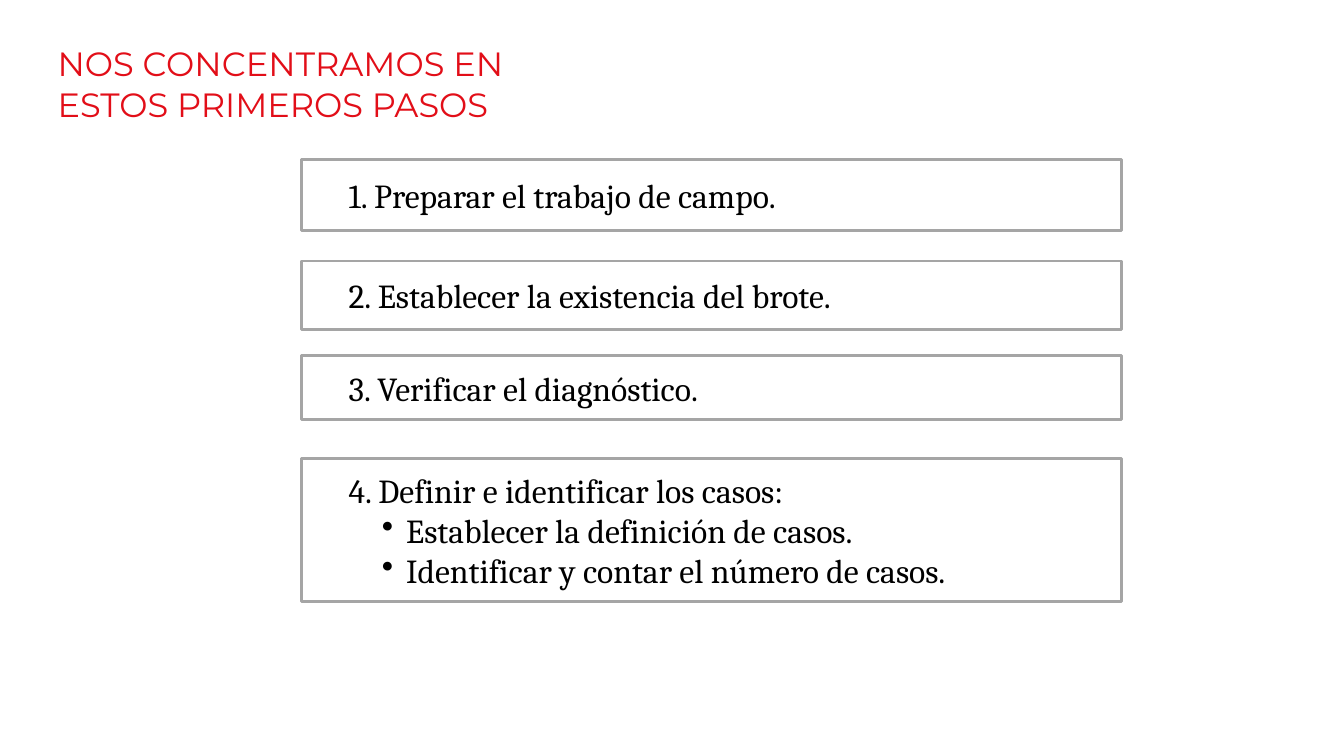
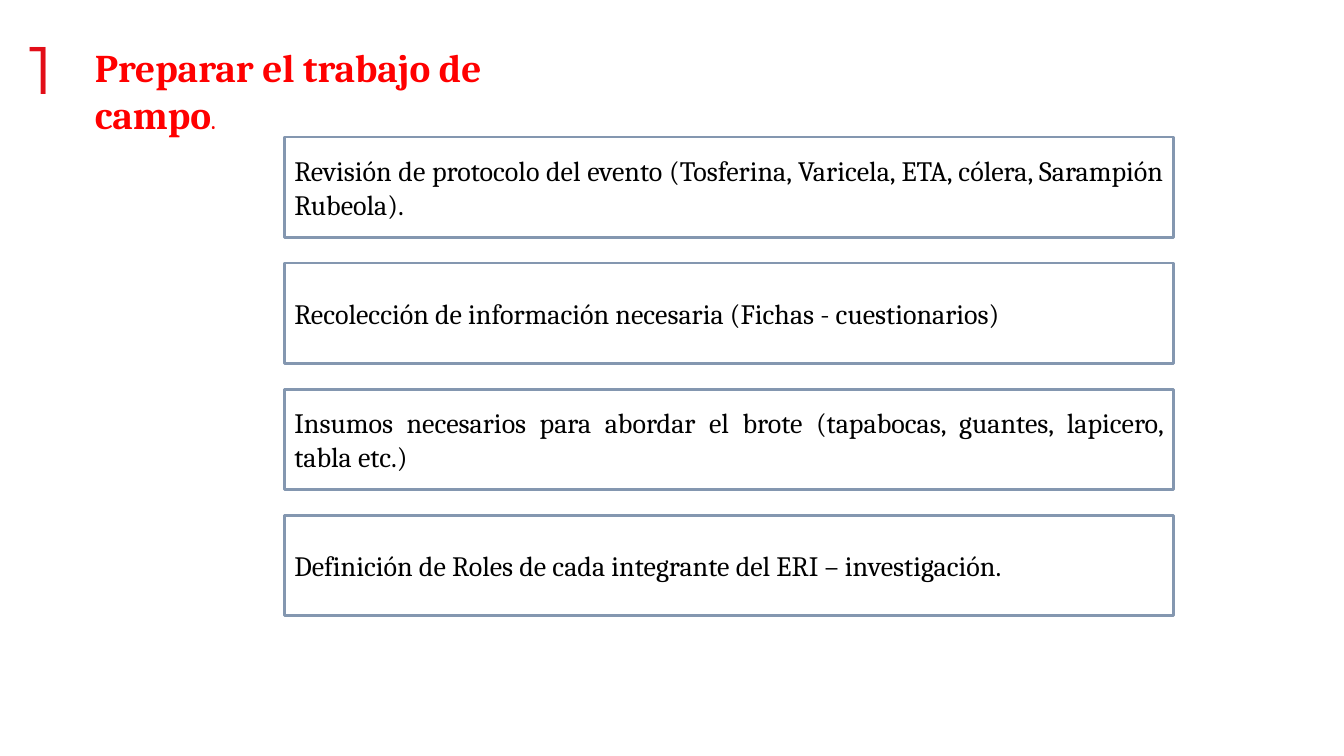
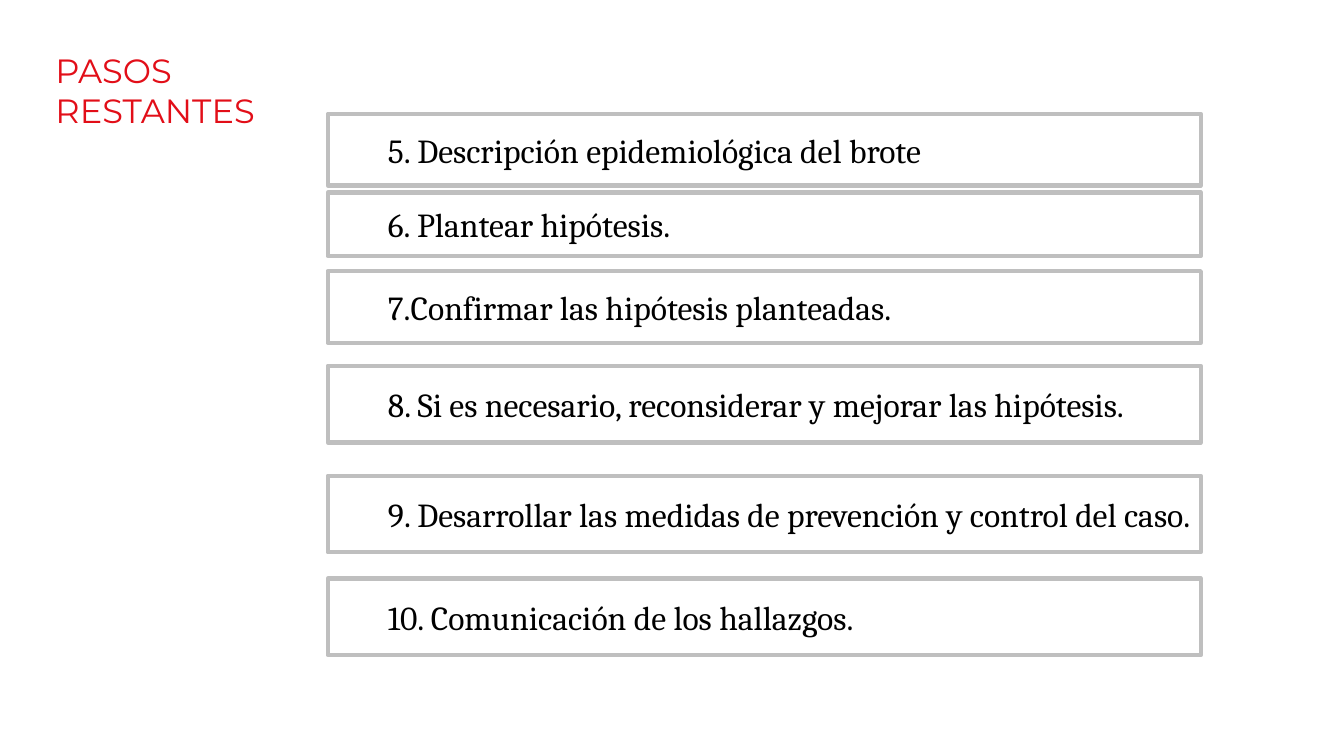
from dataclasses import dataclass

from lxml import etree
from pptx import Presentation
from pptx.dml.color import RGBColor
from pptx.enum.shapes import MSO_SHAPE
from pptx.enum.text import MSO_ANCHOR, MSO_AUTO_SIZE, PP_ALIGN
from pptx.oxml.ns import qn
from pptx.util import Inches, Pt

RECTANGLE = MSO_SHAPE.RECTANGLE
TOP, MIDDLE = MSO_ANCHOR.TOP, MSO_ANCHOR.MIDDLE
LEFT, JUSTIFY = PP_ALIGN.LEFT, PP_ALIGN.JUSTIFY
FIXED = MSO_AUTO_SIZE.NONE


@dataclass(frozen=True)
class Theme:
    heading_font: str = "Montserrat"
    body_font: str = "Cambria"
    heading: str = "E20E18"
    accent: str = "FF0000"
    text: str = "000000"
    paper: str = "FFFFFF"
    step_line: str = "A5A5A5"
    task_line: str = "8497B0"
    rest_line: str = "BFBFBF"
    number_size: int = 48
    accent_size: int = 28
    step_size: int = 24
    task_size: int = 20
    period_size: int = 14


theme = Theme()
presentation = Presentation()
presentation.slide_width = Inches(13.33)
presentation.slide_height = Inches(7.5)
COLUMN = presentation.slide_width / 100
ROW = presentation.slide_height / 100


def place(left, top, width, height):
    return [round(left * COLUMN), round(top * ROW), round(width * COLUMN), round(height * ROW)]


def write(paragraph, text, size=theme.step_size, font=theme.body_font, color=theme.text,
          bold=False, align=LEFT, margin=0, indent=0, bullet=None):
    paragraph.alignment = align
    properties = paragraph._p.get_or_add_pPr()
    properties.set("marL", str(Inches(margin)))
    properties.set("indent", str(Inches(indent)))
    if bullet:
        paragraph.level = 1
        bullet_color = etree.SubElement(properties, qn("a:buClr"))
        etree.SubElement(bullet_color, qn("a:srgbClr"), val=color)
        etree.SubElement(properties, qn("a:buChar"), char=bullet)
    run = paragraph.add_run()
    run.text = text
    run.font.size = Pt(size)
    run.font.name = font
    run.font.bold = bold
    run.font.color.rgb = RGBColor.from_string(color)


heading_format = dict(font=theme.heading_font, color=theme.heading)
accent_format = dict(color=theme.accent, bold=True, margin=0.37)
step_format = dict(margin=0.37)
task_format = dict(size=theme.task_size, align=JUSTIFY)
rest_format = dict(margin=1, indent=-0.5)
bullet_format = dict(margin=0.94, indent=-0.24, bullet="•")

pages = [
    dict(
        title=[("NOS CONCENTRAMOS EN ESTOS PRIMEROS PASOS", heading_format)],
        title_area=(3.53, 5.07, 37.96, 12.13),
        left=22.43, width=61, line=theme.step_line, line_width=2, format=step_format,
        boxes=[
            (21.07, 9.47, ["1. Preparar el trabajo de campo."]),
            (34.53, 9.07, ["2. Establecer la existencia del brote."]),
            (47.07, 8.4, ["3. Verificar el diagnóstico."]),
            (60.67, 18.93, ["4. Definir e identificar los casos:",
                            "Establecer la definición de casos.",
                            "Identificar y contar el número de casos."]),
        ],
    ),
    dict(
        title=[("Preparar el trabajo de campo", dict(accent_format, size=theme.accent_size)),
               (".", dict(accent_format, size=theme.period_size))],
        title_area=(3.53, 5.07, 37.96, 14.53),
        number="1",
        left=21.16, width=66.17, line=theme.task_line, line_width=2, format=task_format,
        boxes=[(18.13 + 16.67 * index, 13.33, [task]) for index, task in enumerate([
            "Revisión de protocolo del evento (Tosferina, Varicela, ETA, cólera, Sarampión Rubeola).",
            "Recolección de información necesaria (Fichas - cuestionarios)",
            "Insumos necesarios para abordar el brote (tapabocas, guantes, lapicero, tabla etc.)",
            "Definición de Roles de cada integrante del ERI – investigación.",
        ])],
    ),
    dict(
        title=[("PASOS RESTANTES", heading_format)],
        title_area=(3.38, 5.87, 21, 12.13),
        left=24.38, width=64.97, line=theme.rest_line, line_width=3, format=rest_format,
        boxes=[
            (15.07, 9.47, ["5. Descripción epidemiológica del brote"]),
            (25.47, 8.4, ["6. Plantear hipótesis."]),
            (35.87, 9.47, ["7.Confirmar las hipótesis planteadas."]),
            (48.4, 10.13, ["8. Si es necesario, reconsiderar y mejorar las hipótesis."]),
            (62.93, 10.13, ["9. Desarrollar las medidas de prevención y control del caso."]),
            (76.53, 10.13, ["10. Comunicación de los hallazgos."]),
        ],
    ),
]

title_layout = presentation.slide_layouts[5]
for page in pages:
    slide = presentation.slides.add_slide(title_layout)
    title = slide.shapes.title
    title.left, title.top, title.width, title.height = place(*page["title_area"])
    title.text_frame.vertical_anchor = TOP
    title.text_frame.auto_size = FIXED
    title.text_frame.word_wrap = True
    for text, text_format in page["title"]:
        write(title.text_frame.paragraphs[0], text, **text_format)

    if "number" in page:
        number = slide.shapes.add_textbox(*place(1.43, 2.93, 5.4, 12.13))
        number.text_frame.word_wrap = True
        write(number.text_frame.paragraphs[0], page["number"],
              size=theme.number_size, **heading_format)

    for top, height, lines in page["boxes"]:
        box = slide.shapes.add_shape(RECTANGLE, *place(page["left"], top, page["width"], height))
        box.shadow.inherit = False
        box.fill.solid()
        box.fill.fore_color.rgb = RGBColor.from_string(theme.paper)
        box.line.color.rgb = RGBColor.from_string(page["line"])
        box.line.width = Pt(page["line_width"])
        frame = box.text_frame
        frame.word_wrap = True
        frame.vertical_anchor = MIDDLE
        write(frame.paragraphs[0], lines[0], **page["format"])
        for line in lines[1:]:
            write(frame.add_paragraph(), line, **bullet_format)

presentation.save("out.pptx")
